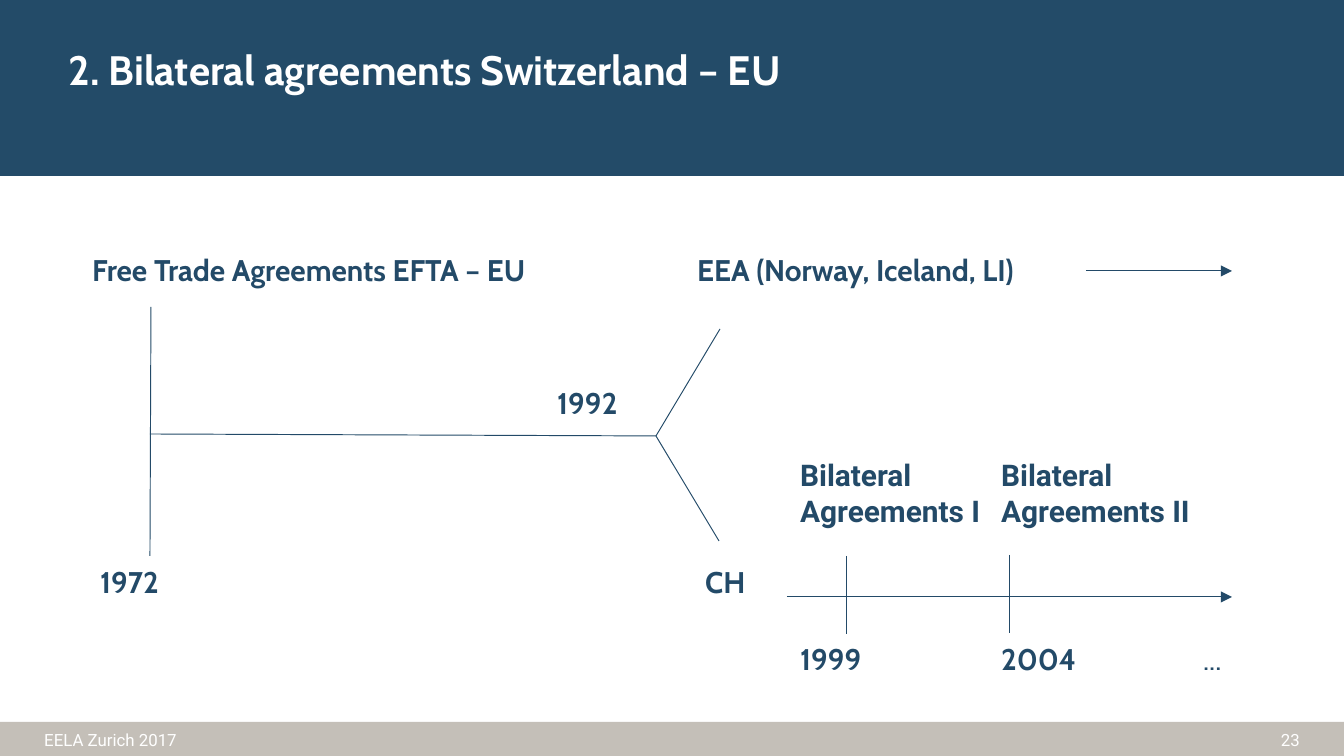
from dataclasses import dataclass

from lxml.etree import SubElement as Sub
from pptx import Presentation
from pptx.dml.color import RGBColor as RGB
from pptx.enum.shapes import MSO_CONNECTOR as Conn, MSO_SHAPE as Kind
from pptx.enum.text import MSO_ANCHOR as Anchor, MSO_AUTO_SIZE as Fit, PP_ALIGN as Align
from pptx.oxml.ns import qn
from pptx.util import Emu, Pt

WIDE, HIGH = 1344, 756
SCALE = 9144000 / WIDE


@dataclass(frozen=True)
class Theme:
    band: str = "234B68"
    foot: str = "C4BFB8"
    ink: str = "234A68"
    white: str = "FFFFFF"
    head: str = "Cabin"
    text: str = "Roboto"
    big: int = 22
    mid: int = 16
    small: int = 9
    rule: float = 0.5


T = Theme()
TITLE = dict(name=T.head, size=Pt(T.big), bold=True)
LABEL = dict(name=T.head, size=Pt(T.mid), bold=True)
NAME = LABEL | dict(name=T.text)
PLAIN = LABEL | dict(bold=False)
SMALL = dict(name=T.text, size=Pt(T.small), bold=False)

BRANCH, STEP = 605, 201  # tab stops of the upper and lower timelines

# text, box (left, top, width, height), format, tab stop
LABELS = [
    ("Free Trade Agreements EFTA – EU\tEEA (Norway, Iceland, LI)",
     (79, 245, 1007, 50), LABEL, BRANCH),
    ("1992", (544, 378, 112, 50), LABEL, None),
    ("1972\tCH", (87, 557, 683, 50), LABEL, BRANCH),
    ("Bilateral\tBilateral\vAgreements I\tAgreements II",
     (787, 450, 505, 86), NAME, STEP),
    ("1999\t2004", (787, 634, 380, 50), LABEL, STEP),
    ("...", (1190, 634, 76, 50), PLAIN, None),
]

# start x, y, end x, y
LINES = [
    (151, 307, 150, 556),
    (150, 434, 656, 436),
    (720, 329, 656, 436),
    (719, 541, 656, 436),
    (846, 556, 846, 634),
    (1010, 555, 1010, 633),
]
ARROWS = [(1086, 271, 1232, 271), (787, 597, 1232, 597)]


def px(n):
    return Emu(round(n * SCALE))


def bar(slide, top, high, color):
    box = slide.shapes.add_shape(Kind.RECTANGLE, 0, px(top), px(WIDE), px(high))
    box.shadow.inherit = False
    box.fill.solid()
    box.fill.fore_color.rgb = RGB.from_string(color)
    box.line.fill.background()


def write(box, text, form, color, tab=None, align=Align.LEFT, anchor=Anchor.TOP):
    frame = box.text_frame
    for key, val in dict(word_wrap=True, auto_size=Fit.NONE,
                         vertical_anchor=anchor).items():
        setattr(frame, key, val)
    para = frame.paragraphs[0]
    para.text = text
    para.alignment = align
    if tab:
        stops = Sub(para._p.get_or_add_pPr(), qn("a:tabLst"))
        Sub(stops, qn("a:tab"), pos=str(px(tab)), algn="l")
    for run in para.runs:
        for key, val in form.items():
            setattr(run.font, key, val)
        run.font.color.rgb = RGB.from_string(color)


def label(slide, text, spot, form, tab=None, color=T.ink, **place):
    box = slide.shapes.add_textbox(*map(px, spot))
    write(box, text, form, color, tab, **place)


def line(slide, ends, arrow=False):
    link = slide.shapes.add_connector(Conn.STRAIGHT, *map(px, ends))
    link.line.color.rgb = RGB.from_string(T.ink)
    link.line.width = Pt(T.rule)
    if arrow:
        Sub(link.line._get_or_add_ln(), qn("a:tailEnd"), type="triangle")
    Sub(link._element.spPr, qn("a:effectLst"))


def title(slide, text, spot):
    box = slide.shapes.title
    for key, val in zip(("left", "top", "width", "height"), spot):
        setattr(box, key, px(val))
    write(box, text, TITLE, T.white)
    slide.shapes.element.append(box.element)  # bring in front of the band


def main():
    deck = Presentation()
    deck.slide_width, deck.slide_height = px(WIDE), px(HIGH)
    slide = deck.slides.add_slide(deck.slide_layouts[5])
    bar(slide, 0, 176, T.band)
    bar(slide, 722, HIGH - 722, T.foot)
    title(slide, "2. Bilateral agreements Switzerland – EU", (55, 38, 1007, 63))
    label(slide, "EELA Zurich 2017", (31, 723, 302, 33), SMALL, color=T.white)
    label(slide, "23", (1011, 724, 302, 32), SMALL, color=T.white,
          align=Align.RIGHT, anchor=Anchor.MIDDLE)
    for ends in LINES:
        line(slide, ends)
    for ends in ARROWS:
        line(slide, ends, arrow=True)
    for item in LABELS:
        label(slide, *item)
    deck.save("out.pptx")


if __name__ == "__main__":
    main()
